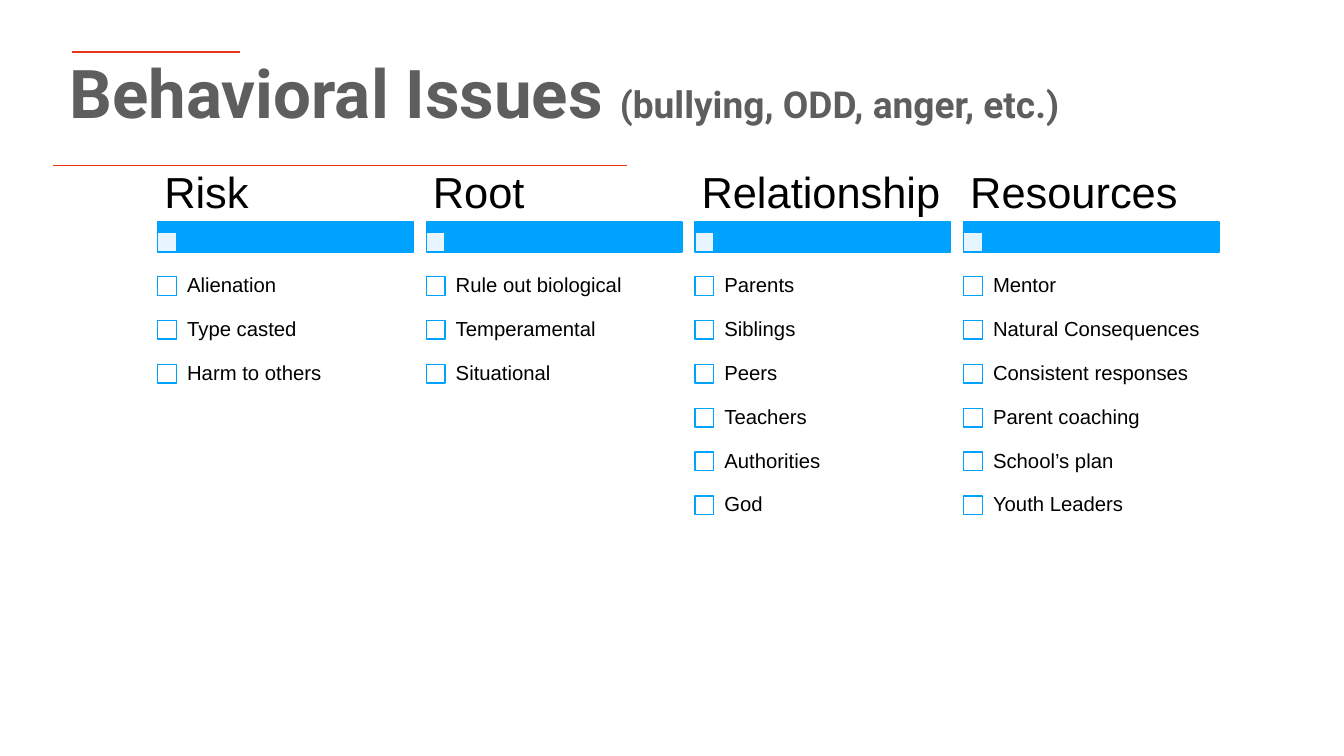
"""Build the slide on behavioral issues with four checklist columns."""
from lxml.etree import SubElement
from pptx import Presentation
from pptx.dml.color import RGBColor
from pptx.enum.shapes import MSO_CONNECTOR as Link, MSO_SHAPE as Kind
from pptx.enum.text import MSO_ANCHOR as Anchor
from pptx.oxml.ns import qn
from pptx.util import Cm, Pt

TITLE = [("Behavioral Issues ", 96), ("(bullying, ODD, anger, etc.)", 53)]
COLUMNS = [
    ("Risk", ["Alienation", "Type casted", "Harm to others"]),
    ("Root", ["Rule out biological", "Temperamental", "Situational"]),
    ("Relationship", ["Parents", "Siblings", "Peers", "Teachers", "Authorities", "God"]),
    ("Resources", ["Mentor", "Natural Consequences", "Consistent responses",
                   "Parent coaching", "School’s plan", "Youth Leaders"]),
]
RULES = [(3.63, 12.09, 2.62), (2.67, 31.6, 8.33)]

GRAY = RGBColor(0x5E, 0x5E, 0x5E)
RED = RGBColor(0xE8, 0x35, 0x1A)
BLUE = RGBColor(0x00, 0xA2, 0xFF)
WHITE = RGBColor(0xFF, 0xFF, 0xFF)
BLACK = RGBColor(0x00, 0x00, 0x00)

LEFT, STEP, WIDE = 7.95, 13.54, 12.88
HEAD_TOP, HEAD_HIGH = 8.43, 2.72
BAR_TOP, BAR_HIGH = 11.18, 1.52
MARK, MARK_TOP = 0.94, 11.73
ROW_TOP, ROW = 13.31, 2.21
INDENT = 0.9


def add_text(shapes, runs, at, font="Arial", color=BLACK, bold=False,
             pad=(0.15, 0.15), space=0.9, anchor=Anchor.MIDDLE):
    frame = shapes.add_textbox(*map(Cm, at)).text_frame
    frame.word_wrap = True
    frame.vertical_anchor = anchor
    frame.margin_left = frame.margin_right = Cm(pad[0])
    frame.margin_top = frame.margin_bottom = Cm(pad[1])
    para = frame.paragraphs[0]
    para.line_spacing = space
    for text, size in runs:
        run = para.add_run()
        run.text = text
        run.font.name = font
        run.font.size = Pt(size)
        run.font.bold = bold
        run.font.color.rgb = color


def add_rect(shapes, at, fill, alpha=100):
    rect = shapes.add_shape(Kind.RECTANGLE, *map(Cm, at))
    rect.shadow.inherit = False
    rect.fill.solid()
    rect.fill.fore_color.rgb = fill
    rect.line.color.rgb = BLUE
    rect.line.width = Pt(2)
    if alpha < 100:
        tone = rect.fill._xPr.find(qn("a:solidFill"))[0]
        SubElement(tone, qn("a:alpha"), val=str(alpha * 1000))


def add_rule(shapes, start, end, top):
    rule = shapes.add_connector(Link.STRAIGHT, Cm(start), Cm(top), Cm(end), Cm(top))
    rule.line.color.rgb = RED
    rule.line.width = Pt(2)
    SubElement(rule._element.spPr, qn("a:effectLst"))


def add_column(shapes, left, head, items):
    add_rect(shapes, (left, BAR_TOP, WIDE, BAR_HIGH), BLUE)
    add_rect(shapes, (left, MARK_TOP, MARK, MARK), WHITE, alpha=90)
    add_text(shapes, [(head, 62)], (left, HEAD_TOP, WIDE, HEAD_HIGH), pad=(0.33, 0.23))
    for row, item in enumerate(items):
        top = ROW_TOP + row * ROW
        add_rect(shapes, (left, top + (ROW - MARK) / 2, MARK, MARK), WHITE)
        add_text(shapes, [(item, 29)], (left + INDENT, top, WIDE - INDENT, ROW),
                 pad=(0.58, 0.58))


def main():
    deck = Presentation()
    deck.slide_width, deck.slide_height = Cm(67.74), Cm(38.1)
    slide = deck.slides.add_slide(deck.slide_layouts[6])
    add_text(slide.shapes, TITLE, (3.35, 3.23, 58.09, 4.11), font="Roboto",
             color=GRAY, bold=True, space=0.8, anchor=Anchor.TOP)
    for rule in RULES:
        add_rule(slide.shapes, *rule)
    group = slide.shapes.add_group_shape()
    for col, (head, items) in enumerate(COLUMNS):
        add_column(group.shapes, LEFT + col * STEP, head, items)
    deck.save("out.pptx")


if __name__ == "__main__":
    main()
